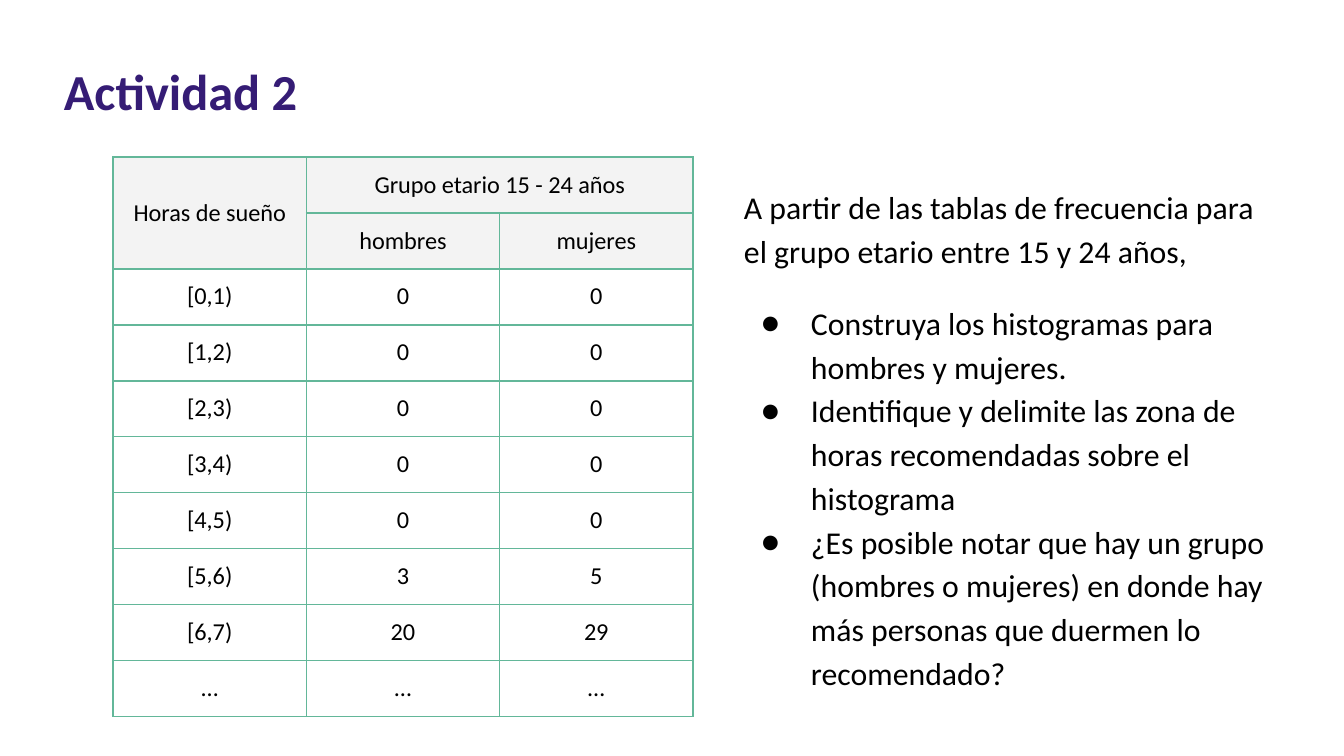
from lxml.etree import SubElement
from pptx import Presentation
from pptx.dml.color import RGBColor
from pptx.enum.text import MSO_ANCHOR, MSO_AUTO_SIZE, PP_ALIGN
from pptx.oxml.ns import qn
from pptx.util import Emu, Pt

BLACK = RGBColor(0x00, 0x00, 0x00)
PURPLE = RGBColor(0x35, 0x1C, 0x75)
GREEN = RGBColor(0x63, 0xB7, 0x99)
HEADER_GREY = RGBColor(0xF3, 0xF3, 0xF3)


def px(length):
    return Emu(round(length * 914400 / 134.4))


class ActivitySlide:
    """Holds the text style and the slide that is being built."""

    font = "Calibri"
    inset = 9
    cell_inset = 13

    def __init__(self, presentation):
        self.slide = presentation.slides.add_slide(presentation.slide_layouts[5])

    def style(self, paragraph, size, color=BLACK, bold=False, align=PP_ALIGN.LEFT):
        paragraph.alignment = align
        for run in paragraph.runs:
            run.font.name = self.font
            run.font.size = Pt(size)
            run.font.bold = bold
            run.font.color.rgb = color

    def set_insets(self, frame, inset):
        frame.margin_left = frame.margin_right = px(inset)
        frame.margin_top = frame.margin_bottom = px(inset)

    def place(self, shape, left, top, width, height):
        shape.left, shape.top = px(left), px(top)
        shape.width, shape.height = px(width), px(height)
        frame = shape.text_frame
        frame.word_wrap = True
        frame.auto_size = MSO_AUTO_SIZE.SHAPE_TO_FIT_TEXT
        frame.vertical_anchor = MSO_ANCHOR.TOP
        self.set_insets(frame, self.inset)
        return frame

    def title(self, text, *box):
        frame = self.place(self.slide.shapes.title, *box)
        frame.text = text
        self.style(frame.paragraphs[0], 27, PURPLE, bold=True)

    def text(self, lines, *box, bulleted=False):
        frame = self.place(self.slide.shapes.add_textbox(0, 0, 0, 0), *box)
        frame.text = "\n".join(lines)
        for paragraph in frame.paragraphs:
            if bulleted:
                self.bullet(paragraph)
            paragraph.line_spacing = 1.15
            self.style(paragraph, 17)

    def bullet(self, paragraph):
        properties = paragraph._p.get_or_add_pPr()
        properties.set("marL", str(px(67)))
        properties.set("indent", str(px(-50)))
        color = SubElement(properties, qn("a:buClr"))
        SubElement(color, qn("a:srgbClr"), val=str(BLACK))
        SubElement(properties, qn("a:buFont"), typeface=self.font)
        SubElement(properties, qn("a:buChar"), char="●")

    def borders(self, cell):
        properties = cell._tc.get_or_add_tcPr()
        for side in ("L", "R", "T", "B"):
            line = SubElement(properties, qn(f"a:ln{side}"), w=str(Pt(0.75)))
            fill = SubElement(line, qn("a:solidFill"))
            SubElement(fill, qn("a:srgbClr"), val=str(GREEN))

    def table(self, rows, header_rows, merges, left, top, width, row_height):
        table = self.slide.shapes.add_table(
            len(rows), len(rows[0]), px(left), px(top),
            px(width), px(row_height * len(rows))).table
        table.first_row = table.horz_banding = False
        for row_index, row in enumerate(rows):
            for column_index, text in enumerate(row):
                cell = table.cell(row_index, column_index)
                self.set_insets(cell, self.cell_inset)
                self.borders(cell)
                if row_index < header_rows:
                    cell.fill.solid()
                    cell.fill.fore_color.rgb = HEADER_GREY
                else:
                    cell.fill.background()
                cell.text_frame.text = text
                self.style(cell.text_frame.paragraphs[0], 13, align=PP_ALIGN.CENTER)
        for first, last in merges:
            table.cell(*first).merge(table.cell(*last))
        table.cell(0, 0).vertical_anchor = MSO_ANCHOR.MIDDLE


def main():
    presentation = Presentation()
    presentation.slide_width, presentation.slide_height = px(1344), px(756)
    activity = ActivitySlide(presentation)

    activity.text(
        ["A partir de las tablas de frecuencia para el grupo etario entre 15 y 24 años,"],
        735, 173, 536, 103)
    activity.title("Actividad 2", 55, 51, 1207, 82)

    frequencies = [(0, 0)] * 5 + [(3, 5), (20, 29)]
    rows = [("Horas de sueño", "Grupo etario 15 - 24 años", ""),
            ("", "hombres", "mujeres")]
    rows += [(f"[{hour},{hour + 1})", str(men), str(women))
             for hour, (men, women) in enumerate(frequencies)]
    rows.append(("…",) * 3)
    activity.table(rows, 2, [((0, 0), (1, 0)), ((0, 1), (0, 2))], 113, 157, 580, 56)

    activity.text(
        ["Construya los histogramas para hombres y mujeres.",
         "Identifique y delimite las zona de horas recomendadas sobre el histograma",
         "¿Es posible notar que hay un grupo (hombres o mujeres) en donde hay "
         "más personas que duermen lo recomendado?"],
        735, 289, 578, 413, bulleted=True)
    presentation.save("out.pptx")


if __name__ == "__main__":
    main()
